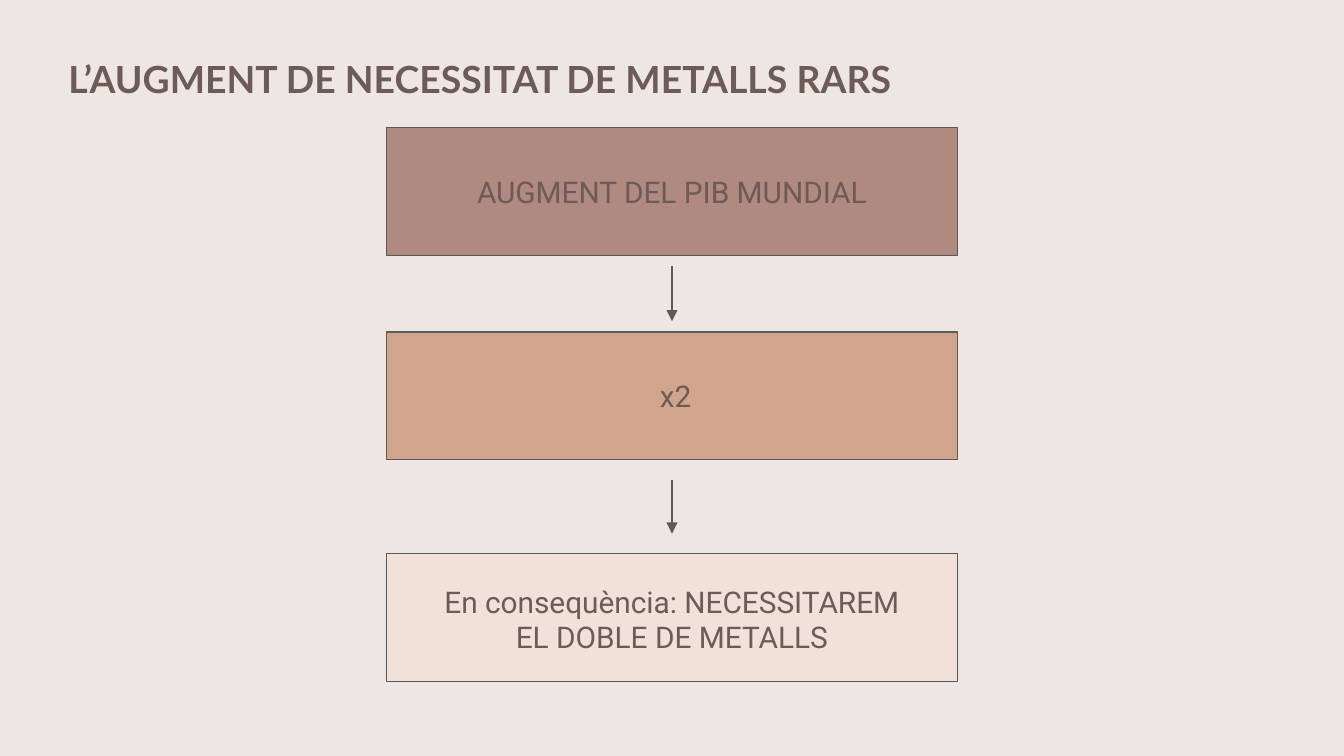
"""Build a slide with a three-step flow on the growing need for rare metals."""
from dataclasses import dataclass

import pptx
import pptx.dml.color
import pptx.enum.shapes
import pptx.enum.text
import pptx.oxml.ns
import pptx.util
from lxml import etree

Inches = pptx.util.Inches
Pt = pptx.util.Pt
ALIGN = pptx.enum.text.PP_ALIGN

COLORS = {
    "background": "EEE6E2",
    "text": "6D5B57",
    "line": "595959",
    "cause": "B08980",
    "factor": "D1A48C",
    "result": "F2E1D8",
}
TITLE_FONT = {"name": "Lato", "size": Pt(20), "bold": True}
STEP_FONT = {"name": "Roboto", "size": Pt(16), "bold": False}
FRAME = {
    "word_wrap": True,
    "vertical_anchor": pptx.enum.text.MSO_ANCHOR.TOP,
    "margin_left": Inches(0.1),
    "margin_right": Inches(0.1),
    "margin_top": Inches(0.1),
    "margin_bottom": Inches(0.1),
}
CENTER = 5
STEP_WIDTH, STEP_HEIGHT = 4.25, 0.95


@dataclass
class Step:
    text: str
    color: str
    top: float
    text_top: float
    text_width: float
    text_height: float


@dataclass
class Arrow:
    top: float
    bottom: float


STEPS = [
    Step("AUGMENT DEL PIB MUNDIAL", "cause", 0.95, 1.19, 3.28, 0.47),
    Step(" x2", "factor", 2.47, 2.71, 3.28, 0.47),
    Step("En consequència: NECESSITAREM EL DOBLE DE METALLS", "result", 4.12, 4.24, 3.64, 0.74),
]
ARROWS = [Arrow(1.98, 2.39), Arrow(3.57, 3.97)]


def rgb(name: str) -> pptx.dml.color.RGBColor:
    return pptx.dml.color.RGBColor.from_string(COLORS[name])


def style_line(line) -> None:
    line.color.rgb = rgb("line")
    line.width = Pt(0.75)


def add_text(s, text: str, left: float, top: float, width: float, height: float,
             font: dict, align: ALIGN) -> None:
    tf = s.shapes.add_textbox(Inches(left), Inches(top), Inches(width), Inches(height)).text_frame
    for name, value in FRAME.items():
        setattr(tf, name, value)
    p = tf.paragraphs[0]
    p.alignment = align
    r = p.add_run()
    r.text = text
    for name, value in font.items():
        setattr(r.font, name, value)
    r.font.color.rgb = rgb("text")


def add_step(s, step: Step) -> None:
    sp = s.shapes.add_shape(
        pptx.enum.shapes.MSO_SHAPE.RECTANGLE,
        Inches(CENTER - STEP_WIDTH / 2), Inches(step.top),
        Inches(STEP_WIDTH), Inches(STEP_HEIGHT))
    sp.shadow.inherit = False
    sp.fill.solid()
    sp.fill.fore_color.rgb = rgb(step.color)
    style_line(sp.line)
    add_text(s, step.text, CENTER - step.text_width / 2, step.text_top,
             step.text_width, step.text_height, STEP_FONT, ALIGN.CENTER)


def add_arrow(s, arrow: Arrow) -> None:
    cxn = s.shapes.add_connector(
        pptx.enum.shapes.MSO_CONNECTOR.STRAIGHT,
        Inches(CENTER), Inches(arrow.top), Inches(CENTER), Inches(arrow.bottom))
    style_line(cxn.line)
    qn = pptx.oxml.ns.qn
    etree.SubElement(cxn.line._get_or_add_ln(), qn("a:tailEnd"), type="triangle")
    etree.SubElement(cxn._element.spPr, qn("a:effectLst"))


def main() -> None:
    prs = pptx.Presentation()
    prs.slide_width = Inches(10)
    prs.slide_height = Inches(10 * 9 / 16)
    s = prs.slides.add_slide(prs.slide_layouts[6])
    s.background.fill.solid()
    s.background.fill.fore_color.rgb = rgb("background")
    add_text(s, "L’AUGMENT DE NECESSITAT DE METALLS RARS", 0.41, 0.32, 8.43, 0.63,
             TITLE_FONT, ALIGN.LEFT)
    for step in STEPS:
        add_step(s, step)
    for arrow in ARROWS:
        add_arrow(s, arrow)
    prs.save("out.pptx")


if __name__ == "__main__":
    main()
